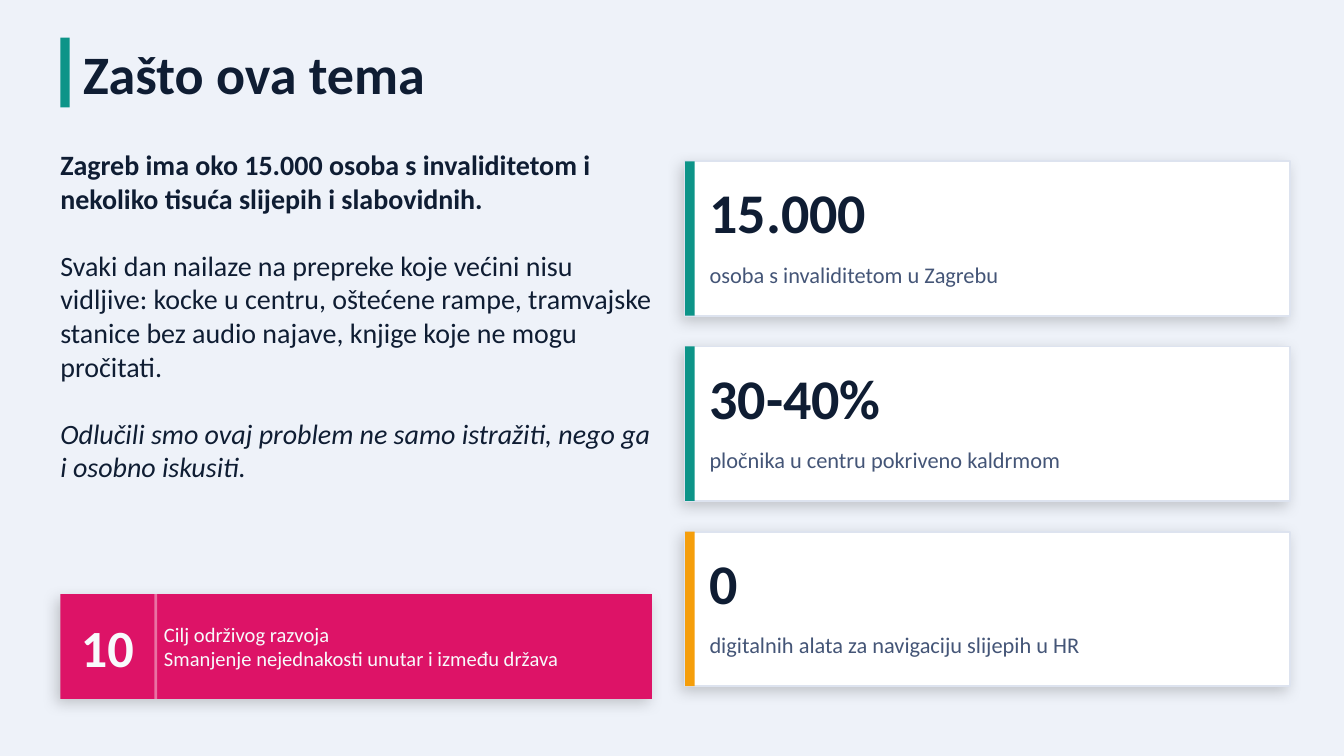
from dataclasses import dataclass

import pptx
import pptx.dml.color
import pptx.enum.shapes
import pptx.enum.text
import pptx.oxml.ns
import pptx.util
from lxml import etree

Cm, Pt = pptx.util.Cm, pptx.util.Pt
qn = pptx.oxml.ns.qn
ANCHOR = pptx.enum.text.MSO_ANCHOR
ALIGN = pptx.enum.text.PP_ALIGN

COLORS = {
    "background": "EEF2F9", "ink": "0F1D33", "muted": "445577",
    "teal": "0D9488", "amber": "F59E0B", "pink": "DD1367",
    "white": "FFFFFF", "light": "F8FAFC", "border": "DDE3EF",
    "shadow": "000000",
}
FORMATS = {
    "title": {"size": Pt(29), "bold": True},
    "lead": {"size": Pt(15), "bold": True},
    "body": {"size": Pt(15), "bold": False},
    "closing": {"size": Pt(15), "bold": False, "italic": True},
    "goal number": {"size": Pt(28), "bold": True},
    "goal text": {"size": Pt(11)},
    "figure": {"size": Pt(30), "bold": True},
    "caption": {"size": Pt(12)},
}


@dataclass
class Box:
    left: float
    top: float
    width: float
    height: float

    def lengths(self) -> tuple:
        return tuple(Cm(n) for n in (self.left, self.top, self.width, self.height))


@dataclass
class Card:
    figure: str
    caption: str
    accent: str


CARDS = [
    Card("15.000", "osoba s invaliditetom u Zagrebu", "teal"),
    Card("30-40%", "pločnika u centru pokriveno kaldrmom", "teal"),
    Card("0", "digitalnih alata za navigaciju slijepih u HR", "amber"),
]
BODY = [
    ("Zagreb ima oko 15.000 osoba s invaliditetom i nekoliko tisuća slijepih i slabovidnih.", "lead"),
    ("Svaki dan nailaze na prepreke koje većini nisu vidljive: kocke u centru, oštećene rampe, "
     "tramvajske stanice bez audio najave, knjige koje ne mogu pročitati.", "body"),
    ("Odlučili smo ovaj problem ne samo istražiti, nego ga i osobno iskusiti.", "closing"),
]


def rgb(name: str) -> pptx.dml.color.RGBColor:
    return pptx.dml.color.RGBColor.from_string(COLORS[name])


def add_panel(slide, box: Box, fill: str, line: str = "", shadow: bool = False):
    shape = slide.shapes.add_shape(pptx.enum.shapes.MSO_SHAPE.RECTANGLE, *box.lengths())
    shape.shadow.inherit = False
    shape.fill.solid()
    shape.fill.fore_color.rgb = rgb(fill)
    if line:
        shape.line.color.rgb = rgb(line)
        shape.line.width = Pt(1)
    else:
        shape.line.fill.background()
    if shadow:
        effects = shape._element.spPr.find(qn("a:effectLst"))
        outer = etree.SubElement(
            effects, qn("a:outerShdw"), blurRad=str(Pt(8)), dist=str(Pt(3)),
            dir=str(135 * 60000), algn="bl", rotWithShape="0")
        color = etree.SubElement(outer, qn("a:srgbClr"), val=COLORS["shadow"])
        etree.SubElement(color, qn("a:alpha"), val="18000")
    return shape


def write(shape, lines: list, color: str, anchor=ANCHOR.MIDDLE, align=ALIGN.LEFT, gap: int = 0) -> None:
    """Fill a text shape with (text, format name) lines, one paragraph each."""
    frame = shape.text_frame
    settings = {"word_wrap": True, "auto_size": pptx.enum.text.MSO_AUTO_SIZE.NONE,
                "vertical_anchor": anchor, "margin_left": 0, "margin_right": 0,
                "margin_top": 0, "margin_bottom": 0}
    for name, value in settings.items():
        setattr(frame, name, value)
    for index, (text, style) in enumerate(lines):
        paragraph = frame.add_paragraph() if index else frame.paragraphs[0]
        paragraph.alignment = align
        paragraph.space_before = Pt(gap if index else 0)
        if shape.is_placeholder:
            properties = paragraph._p.get_or_add_pPr()
            properties.set("marL", "0")
            properties.set("indent", "0")
            etree.SubElement(properties, qn("a:buNone"))
        run = paragraph.add_run()
        run.text = text
        run.font.name = "Calibri"
        run.font.color.rgb = rgb(color)
        for name, value in FORMATS[style].items():
            setattr(run.font, name, value)


def add_text(slide, box: Box, lines: list, color: str, align=ALIGN.LEFT) -> None:
    write(slide.shapes.add_textbox(*box.lengths()), lines, color, align=align)


def place(shape, box: Box) -> None:
    shape.left, shape.top, shape.width, shape.height = box.lengths()


def add_card(slide, card: Card, box: Box) -> None:
    add_panel(slide, box, "white", line="border", shadow=True)
    add_panel(slide, Box(box.left, box.top, 0.18, box.height), card.accent)
    text_left = box.left + 0.46
    add_text(slide, Box(text_left, box.top + 0.25, 10.41, 1.4), [(card.figure, "figure")], "ink")
    add_text(slide, Box(text_left, box.top + 1.65, 10.41, 0.97), [(card.caption, "caption")], "muted")


def main() -> None:
    presentation = pptx.Presentation()
    presentation.slide_width, presentation.slide_height = Cm(25.4), Cm(14.29)
    slide = presentation.slides.add_slide(presentation.slide_layouts[1])
    slide.background.fill.solid()
    slide.background.fill.fore_color.rgb = rgb("background")

    # Title with accent bar
    add_panel(slide, Box(1.14, 0.71, 0.18, 1.32), "teal")
    title = slide.shapes.title
    place(title, Box(1.57, 0.56, 22.86, 1.65))
    write(title, [("Zašto ova tema", "title")], "ink")

    # Explanation on the left
    body = slide.placeholders[1]
    place(body, Box(1.14, 2.79, 11.18, 8.13))
    write(body, BODY, "ink", anchor=ANCHOR.TOP, gap=18)

    # Development goal banner
    top, height = 11.23, 1.98
    add_panel(slide, Box(1.14, top, 11.18, height), "pink", shadow=True)
    add_text(slide, Box(1.14, top, 1.78, height), [("10", "goal number")], "light", ALIGN.CENTER)
    divider = add_panel(slide, Box(2.92, top, 0.05, height), "white")
    divider_color = divider._element.spPr.find(qn("a:solidFill")).find(qn("a:srgbClr"))
    etree.SubElement(divider_color, qn("a:alpha"), val="40000")
    add_text(slide, Box(3.1, top, 8.89, height),
             [("Cilj održivog razvoja", "goal text"),
              ("Smanjenje nejednakosti unutar i između država", "goal text")], "light")

    # Key figures on the right
    for index, card in enumerate(CARDS):
        add_card(slide, card, Box(12.95, 3.05 + 3.5 * index, 11.43, 2.92))

    presentation.save("out.pptx")


if __name__ == "__main__":
    main()
